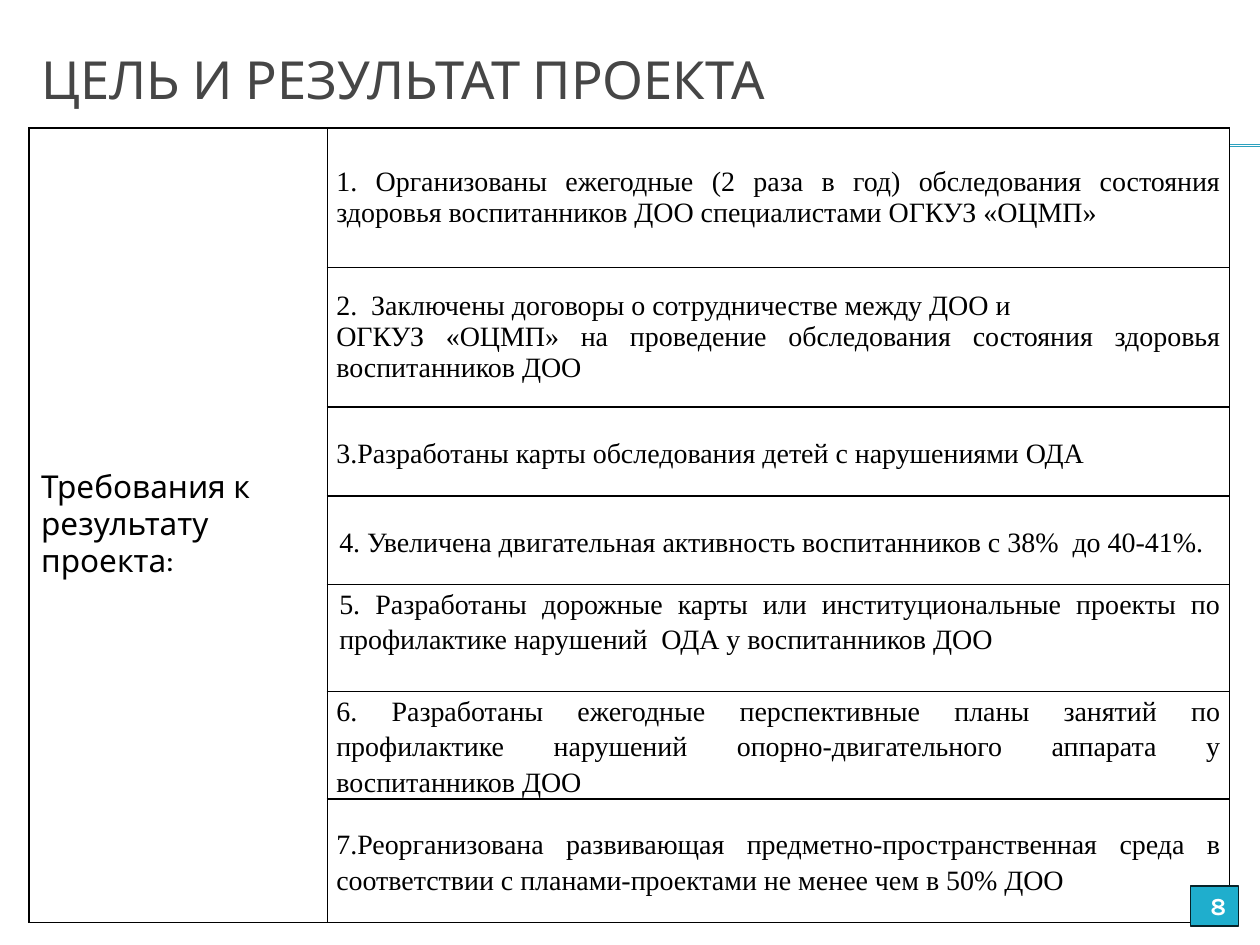
from lxml.etree import SubElement
from pptx import Presentation
from pptx.dml.color import RGBColor
from pptx.enum.shapes import MSO_CONNECTOR, MSO_SHAPE
from pptx.enum.text import MSO_ANCHOR, PP_ALIGN
from pptx.oxml import parse_xml
from pptx.oxml.ns import nsdecls, qn
from pptx.util import Cm, Pt

BLACK = RGBColor(0x00, 0x00, 0x00)
WHITE = RGBColor(0xFF, 0xFF, 0xFF)
TITLE_GREY = RGBColor(0x46, 0x46, 0x46)
RULE_TEAL = RGBColor(0x2D, 0xA2, 0xBF)
BADGE_BLUE = RGBColor(0x1F, 0xAE, 0xCD)
BADGE_BORDER = RGBColor(0x06, 0x23, 0x29)
HEADING_FONT = "Karla"
BODY_FONT = "Times New Roman"

TITLE = "ЦЕЛЬ И РЕЗУЛЬТАТ ПРОЕКТА"
REQUIREMENTS_LABEL = "Требования к результату проекта:"
COLUMN_WIDTHS = (Cm(6.02), Cm(18.19))
MIDDLE, TOP = MSO_ANCHOR.MIDDLE, MSO_ANCHOR.TOP
REQUIREMENTS = [
    (Cm(2.81), MIDDLE, 1, 0, [
        "1. Организованы ежегодные (2 раза в год) обследования состояния "
        "здоровья воспитанников ДОО специалистами ОГКУЗ «ОЦМП»"]),
    (Cm(2.81), MIDDLE, 1, 0, [
        "2.  Заключены договоры о сотрудничестве между ДОО и",
        "ОГКУЗ «ОЦМП» на проведение обследования состояния здоровья "
        "воспитанников ДОО"]),
    (Cm(1.8), MIDDLE, 1.15, 0, [
        "3.Разработаны карты обследования детей с нарушениями ОДА"]),
    (Cm(1.78), MIDDLE, 1.15, Cm(0.06), [
        "4. Увеличена двигательная активность воспитанников с 38%  до 40-41%."]),
    (Cm(2.16), TOP, 1.15, Cm(0.06), [
        "5. Разработаны дорожные карты или институциональные проекты по "
        "профилактике нарушений  ОДА у воспитанников ДОО"]),
    (Cm(2.16), TOP, 1.15, 0, [
        "6. Разработаны ежегодные перспективные планы занятий по профилактике "
        "нарушений опорно-двигательного аппарата у воспитанников ДОО"]),
    (Cm(2.48), MIDDLE, 1.15, 0, [
        "7.Реорганизована развивающая предметно-пространственная среда в "
        "соответствии с планами-проектами не менее чем в 50% ДОО"]),
]


def add_run(paragraph, text, font_name, size, color, bold=False):
    run = paragraph.add_run()
    run.text = text
    run.font.name = font_name
    run.font.size = Pt(size)
    run.font.color.rgb = color
    run.font.bold = bold


def add_header_rules(slide, left, top, width):
    for offset in (0, Cm(0.03)):
        rule = slide.shapes.add_connector(
            MSO_CONNECTOR.STRAIGHT, left, top + offset, left + width, top + offset)
        rule.line.color.rgb = RULE_TEAL
        rule.line.width = Pt(0.75)
        SubElement(rule._element.spPr, qn("a:effectLst"))


def fill_title(slide, left, top, width, height):
    title = slide.shapes.title
    title.left, title.top, title.width, title.height = left, top, width, height
    title.text_frame.vertical_anchor = MIDDLE
    paragraph = title.text_frame.paragraphs[0]
    paragraph.alignment = PP_ALIGN.LEFT
    add_run(paragraph, TITLE, HEADING_FONT, 30, TITLE_GREY)


def style_cell(cell, anchor, side_margin, end_margin):
    cell.fill.solid()
    cell.fill.fore_color.rgb = WHITE
    cell.vertical_anchor = anchor
    cell.margin_left = cell.margin_right = side_margin
    cell.margin_top = cell.margin_bottom = end_margin
    properties = cell._tc.get_or_add_tcPr()
    for position, side in enumerate(("lnL", "lnR", "lnT", "lnB")):
        properties.insert(position, parse_xml(
            f'<a:{side} {nsdecls("a")} w="{Pt(1)}"><a:solidFill>'
            f'<a:srgbClr val="{BLACK}"/></a:solidFill></a:{side}>'))


def add_requirements_table(slide, left, top):
    table = slide.shapes.add_table(
        len(REQUIREMENTS), 2, left, top, sum(COLUMN_WIDTHS),
        sum(requirement[0] for requirement in REQUIREMENTS)).table
    table.first_row = table.horz_banding = False
    for column, width in zip(table.columns, COLUMN_WIDTHS):
        column.width = width

    for index, (height, anchor, spacing, indent, texts) in enumerate(REQUIREMENTS):
        table.rows[index].height = height
        style_cell(table.cell(index, 0), MIDDLE, Cm(0.25), Cm(0.13))
        cell = table.cell(index, 1)
        style_cell(cell, anchor, Cm(0.18), 0)
        frame = cell.text_frame
        for number, text in enumerate(texts):
            paragraph = frame.add_paragraph() if number else frame.paragraphs[0]
            paragraph.alignment = PP_ALIGN.JUSTIFY
            paragraph.line_spacing = float(spacing)
            paragraph._p.get_or_add_pPr().set("marL", str(indent))
            add_run(paragraph, text, BODY_FONT, 16, BLACK)

    label = table.cell(0, 0)
    label.merge(table.cell(len(REQUIREMENTS) - 1, 0))
    add_run(label.text_frame.paragraphs[0], REQUIREMENTS_LABEL, HEADING_FONT, 18, BLACK)


def add_page_badge(slide, left, top, width, height):
    badge = slide.shapes.add_shape(MSO_SHAPE.RECTANGLE, left, top, width, height)
    badge.shadow.inherit = False
    badge.fill.solid()
    badge.fill.fore_color.rgb = BADGE_BLUE
    badge.line.color.rgb = BADGE_BORDER
    badge.line.width = Pt(0.75)
    badge.text_frame.vertical_anchor = MIDDLE
    paragraph = badge.text_frame.paragraphs[0]
    paragraph.alignment = PP_ALIGN.RIGHT
    add_run(paragraph, "8", HEADING_FONT, 14, WHITE, bold=True)


def main():
    presentation = Presentation()
    presentation.slide_width, presentation.slide_height = Cm(25.4), Cm(19.05)
    slide = presentation.slides.add_slide(presentation.slide_layouts[5])
    add_header_rules(slide, Cm(1.42), Cm(2.92), Cm(23.98))
    fill_title(slide, Cm(0.58), Cm(0.41), Cm(24.13), Cm(2.34))
    add_requirements_table(slide, Cm(0.58), Cm(2.58))
    add_page_badge(slide, Cm(24), Cm(17.86), Cm(0.97), Cm(0.81))
    presentation.save("out.pptx")


if __name__ == "__main__":
    main()
